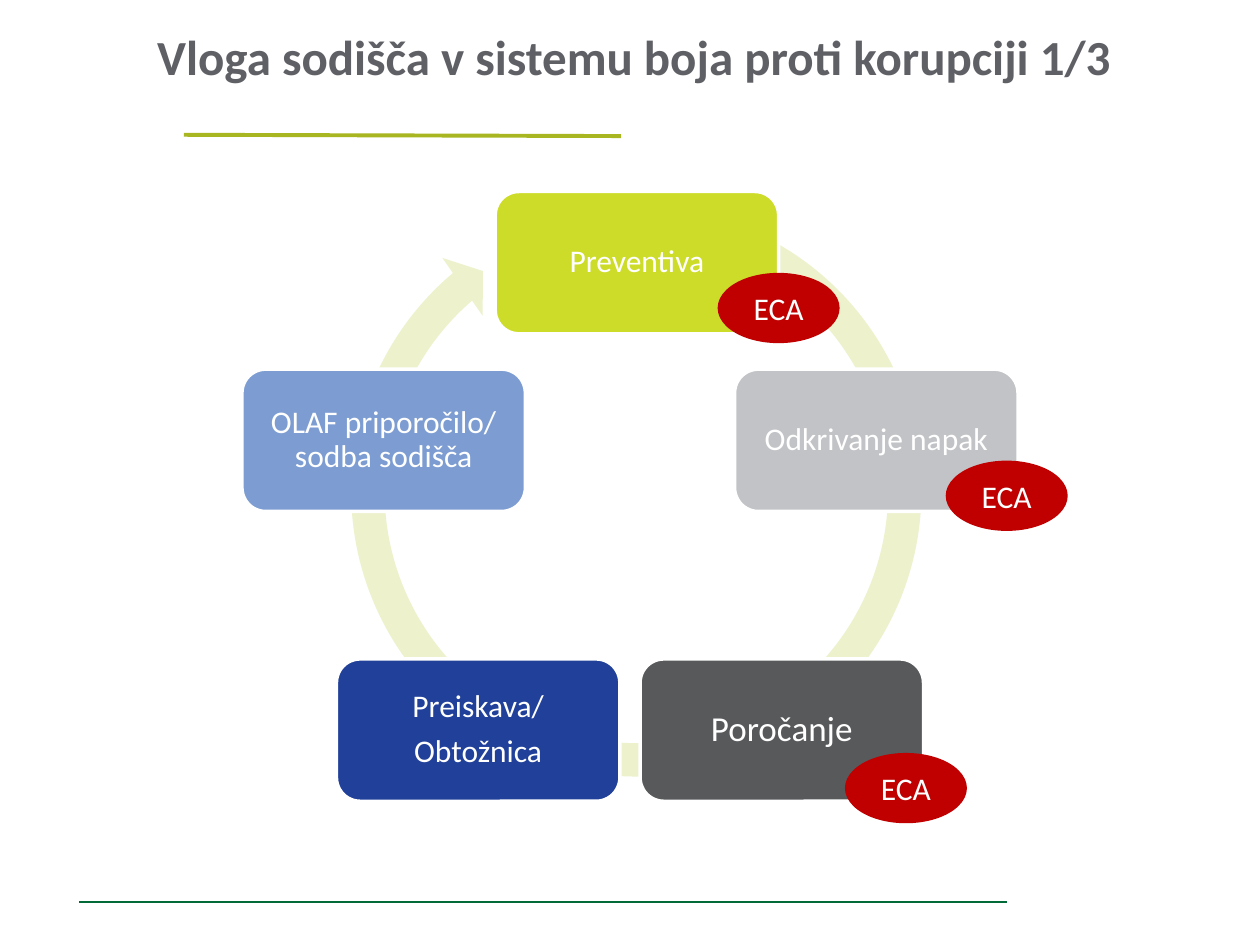
import pptx
import pptx.util
import pptx.dml.color
import pptx.enum.shapes
import pptx.enum.text
import pptx.oxml.ns
import lxml.etree

Inches = pptx.util.Inches
Pt = pptx.util.Pt
SHAPES = pptx.enum.shapes.MSO_SHAPE

COLOURS = {
    "title": "5F6065",
    "rule": "A8B621",
    "footer": "026938",
    "ring": "EDF2CD",
    "white": "FFFFFF",
    "lime": "CDDC29",
    "silver": "C2C3C6",
    "charcoal": "58595B",
    "navy": "20409A",
    "sky": "7D9DD2",
    "red": "C00000",
}


def colour(name):
    return pptx.dml.color.RGBColor.from_string(COLOURS[name])


def write(shape, text, size=18, ink="white", bold=False, spacing=1.0,
          after=0, margins=(0, 0), anchor="MIDDLE"):
    """Fill a shape with centred text, one paragraph per line."""
    frame = shape.text_frame
    frame.word_wrap = True
    frame.vertical_anchor = getattr(pptx.enum.text.MSO_ANCHOR, anchor)
    frame.margin_left = frame.margin_right = Inches(margins[0])
    frame.margin_top = frame.margin_bottom = Inches(margins[1])
    for index, line in enumerate(text.split("\n")):
        para = frame.add_paragraph() if index else frame.paragraphs[0]
        para.alignment = pptx.enum.text.PP_ALIGN.CENTER
        para.line_spacing = spacing
        para.space_after = Pt(after)
        span = para.add_run()
        span.text = line
        span.font.name = "Calibri"
        span.font.size = Pt(size)
        span.font.bold = bold
        span.font.color.rgb = colour(ink)


class CycleSlide:
    BOX = (2.25, 1.13)
    BADGE = (0.94, 0.53)

    def __init__(self, slide):
        self.shapes = slide.shapes

    def title(self, text, left, top, width, height):
        box = self.shapes.add_textbox(
            Inches(left), Inches(top), Inches(width), Inches(height))
        write(box, text, size=28, ink="title", bold=True, spacing=0.9,
              anchor="BOTTOM")

    def line(self, start, end, ink, weight):
        line = self.shapes.add_connector(
            pptx.enum.shapes.MSO_CONNECTOR.STRAIGHT,
            *[Inches(value) for value in (*start, *end)])
        line.line.color.rgb = colour(ink)
        line.line.width = Pt(weight)
        lxml.etree.SubElement(
            line._element.spPr, pptx.oxml.ns.qn("a:effectLst"))

    def shape(self, kind, left, top, size, fill, outline=None):
        shape = self.shapes.add_shape(
            kind, Inches(left), Inches(top), Inches(size[0]), Inches(size[1]))
        shape.shadow.inherit = False
        shape.fill.solid()
        shape.fill.fore_color.rgb = colour(fill)
        if outline:
            shape.line.color.rgb = colour(outline)
            shape.line.width = Pt(2)
        else:
            shape.line.fill.background()
        return shape

    def ring(self, left, top, side, adjustments):
        ring = self.shape(
            SHAPES.CIRCULAR_ARROW, left, top, (side, side), "ring")
        for index, value in enumerate(adjustments):
            ring.adjustments[index] = value

    def step(self, text, left, top, fill, size=18):
        box = self.shape(
            SHAPES.ROUNDED_RECTANGLE, left, top, self.BOX, fill, "white")
        write(box, text, size=size, spacing=0.9, after=size * 0.35,
              margins=(0.12, 0.12))

    def badge(self, left, top):
        badge = self.shape(SHAPES.OVAL, left, top, self.BADGE, "red", "red")
        write(badge, "ECA", margins=(0.1, 0.05))


def main():
    deck = pptx.Presentation()
    deck.slide_width, deck.slide_height = Inches(10), Inches(7.5)
    page = CycleSlide(deck.slides.add_slide(deck.slide_layouts[6]))

    # Footer line and title
    page.line((0.63, 7.16), (7.99, 7.16), "footer", 0.75)
    page.title("Vloga sodišča v sistemu boja proti korupciji 1/3",
               0.25, 0.21, 9.56, 0.47)

    # Cycle: ring behind five steps, clockwise from the top
    page.ring(2.64, 1.49, 4.82, (0.055, 3.31, 137.79, 173.84, 0.058))
    upper, lower = 2.93, 5.23
    page.step("Preventiva", 3.93, 1.52, "lime")
    page.step("Odkrivanje napak", 5.83, upper, "silver")
    page.step("Poročanje", 5.08, lower, "charcoal", size=20)
    page.step("Preiskava/\nObtožnica", 2.67, lower, "navy")
    page.step("OLAF priporočilo/ sodba sodišča", 1.92, upper, "sky")

    # Badges on the steps where the court takes part
    for left, top in ((5.71, 2.18), (7.52, 3.67), (6.72, 5.99)):
        page.badge(left, top)

    # Rule under the title
    page.line((1.46, 1.07), (4.93, 1.08), "rule", 2.25)

    deck.save("out.pptx")


if __name__ == "__main__":
    main()
